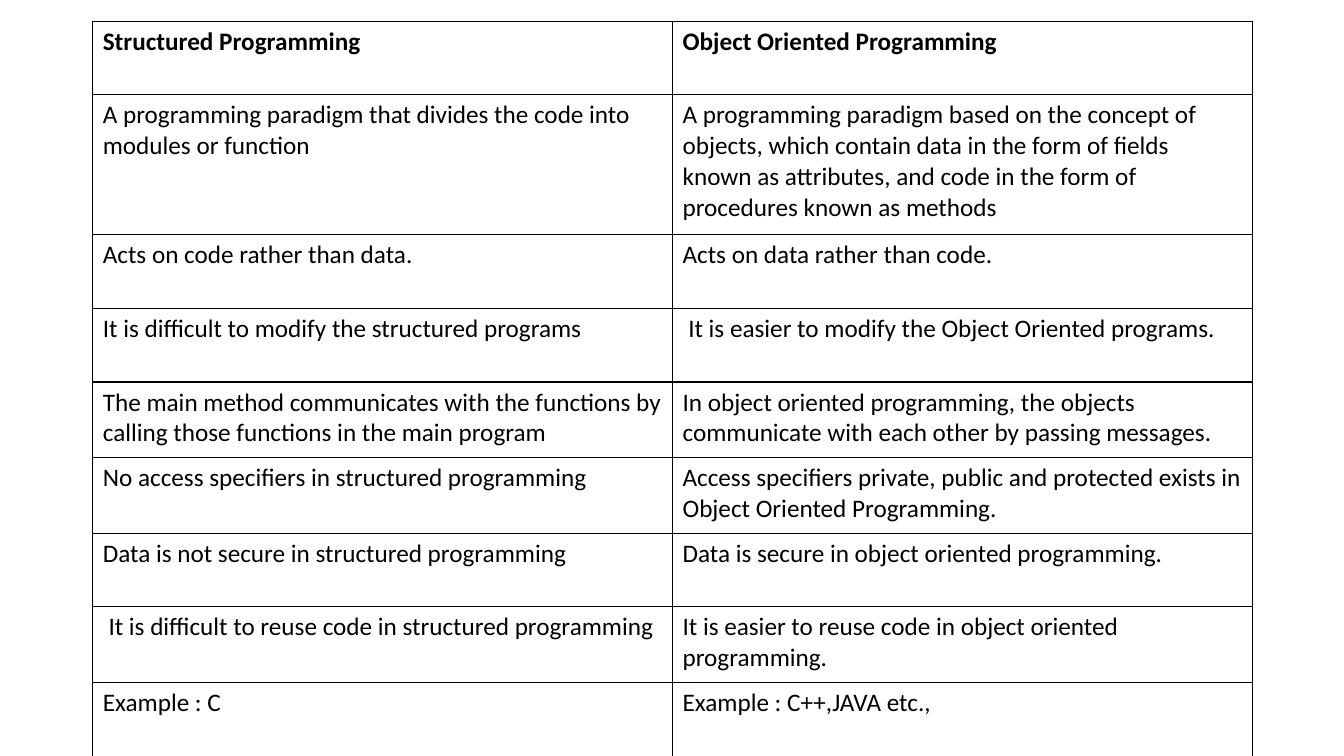
"""Build a slide comparing structured and object oriented programming."""
from dataclasses import dataclass

from lxml import etree
from pptx import Presentation
from pptx import util as u
from pptx.dml.color import RGBColor
from pptx.oxml.ns import qn


@dataclass(frozen=True)
class Theme:
    ink: str = "000000"
    paper: str = "FFFFFF"
    font: str = "Calibri"
    size: int = 18
    border: int = 1


theme = Theme()
PX = 9144


def write(cell, wording, bold=False):
    para = cell.text_frame.paragraphs[0]
    span = para.add_run()
    span.text = wording
    span.font.name = theme.font
    span.font.size = u.Pt(theme.size)
    span.font.bold = bold
    span.font.color.rgb = RGBColor.from_string(theme.ink)


def outline(cell):
    properties = cell._tc.get_or_add_tcPr()
    for side in ("lnL", "lnR", "lnT", "lnB"):
        line = etree.SubElement(properties, qn(f"a:{side}"), w=str(u.Pt(theme.border)))
        fill = etree.SubElement(line, qn("a:solidFill"))
        etree.SubElement(fill, qn("a:srgbClr"), val=theme.ink)


comparison = [
    (73, "Structured Programming", "Object Oriented Programming"),
    (139, "A programming paradigm that divides the code into modules or function",
     "A programming paradigm based on the concept of objects, which contain data in the form "
     "of fields known as attributes, and code in the form of procedures known as methods"),
    (73, "Acts on code rather than data.", "Acts on data rather than code."),
    (73, "It is difficult to modify the structured programs",
     " It is easier to modify the Object Oriented programs."),
    (75, "The main method communicates with the functions by calling those functions in the main program",
     "In object oriented programming, the objects communicate with each other by passing messages."),
    (75, "No access specifiers in structured programming",
     "Access specifiers private, public and protected exists in Object Oriented Programming."),
    (73, "Data is not secure in structured programming",
     "Data is secure in object oriented programming."),
    (75, " It is difficult to reuse code in structured programming",
     "It is easier to reuse code in object oriented programming."),
    (75, "Example : C", "Example : C++,JAVA etc.,"),
]

deck = Presentation()
deck.slide_width, deck.slide_height = 1333 * PX, 750 * PX
page = deck.slides.add_slide(deck.slide_layouts[6])
page.background.fill.solid()
page.background.fill.fore_color.rgb = RGBColor.from_string(theme.paper)

total_height = sum(height for height, *_ in comparison)
table = page.shapes.add_table(
    len(comparison), 2, 92 * PX, 21 * PX, 1150 * PX, total_height * PX).table
table.first_row = False
table.horz_banding = False

for row_index, (height, *wordings) in enumerate(comparison):
    table.rows[row_index].height = height * PX
    for column_index, wording in enumerate(wordings):
        cell = table.cell(row_index, column_index)
        write(cell, wording, bold=row_index == 0)
        outline(cell)
        cell.fill.background()

deck.save("out.pptx")
